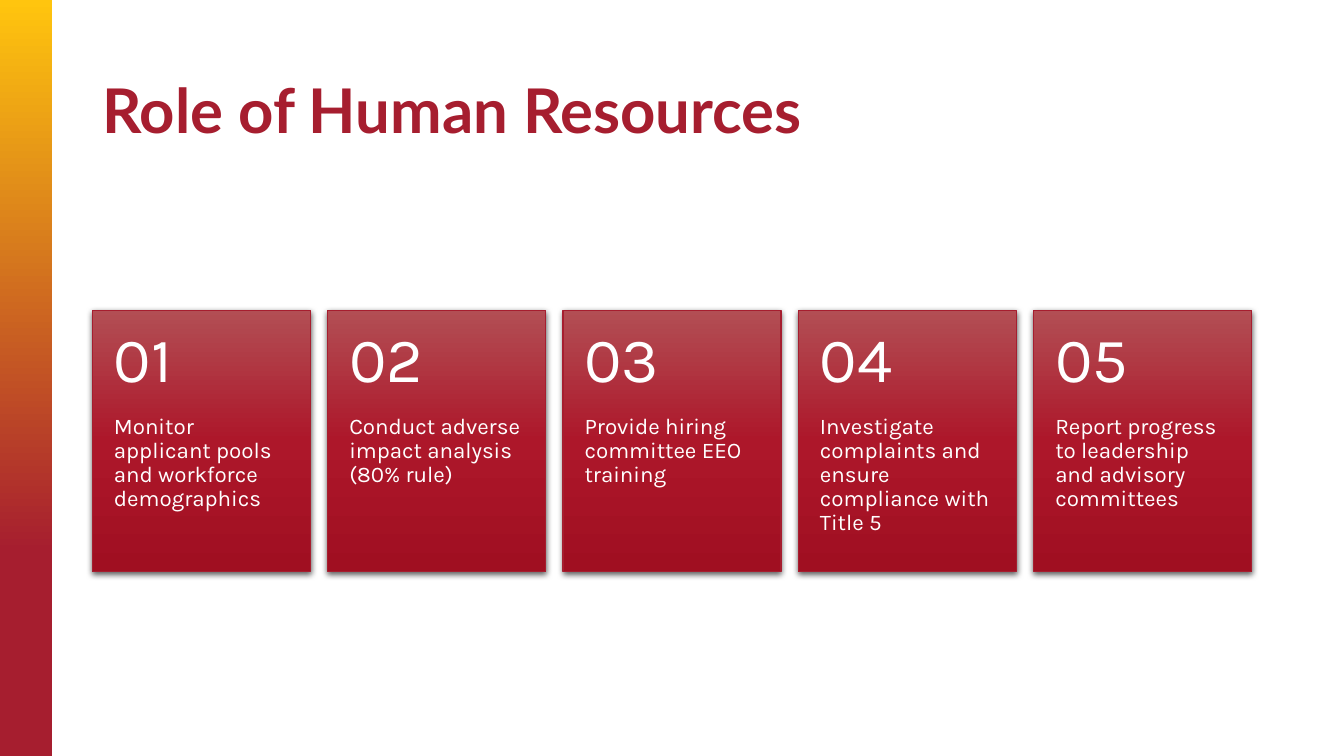
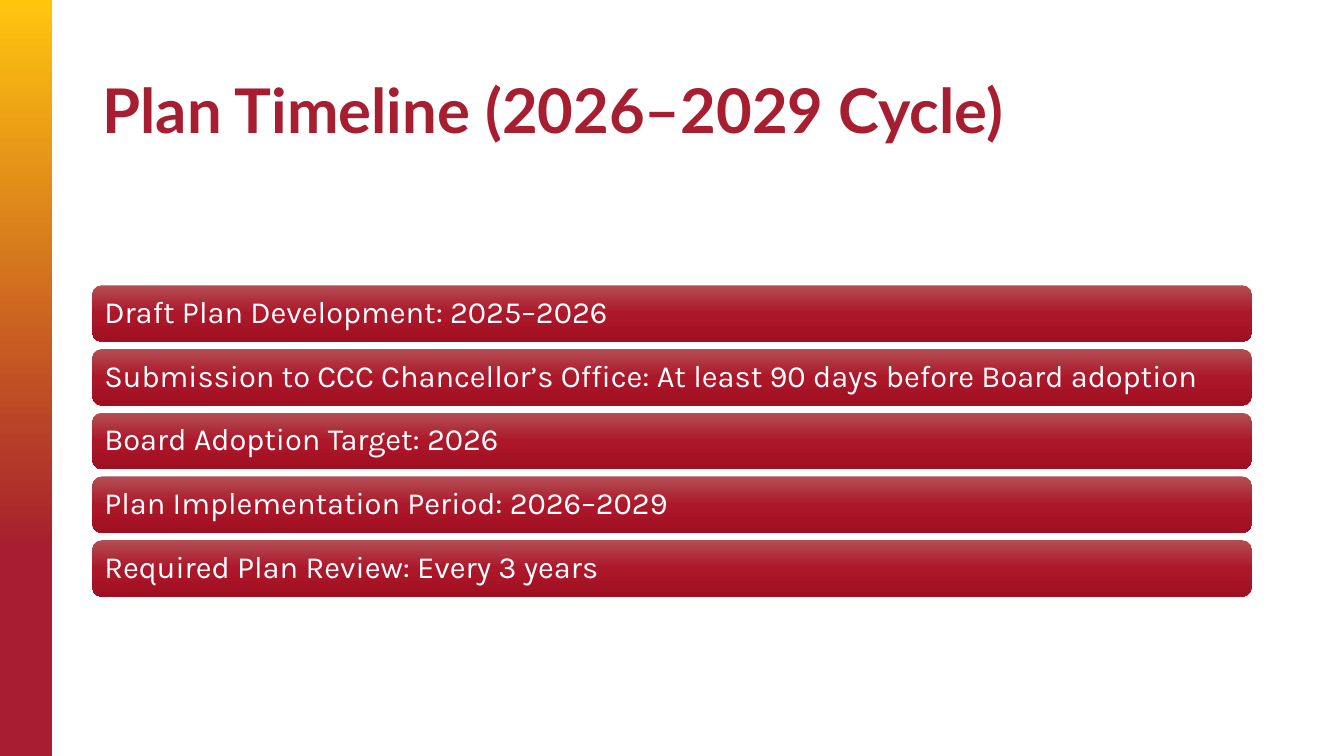
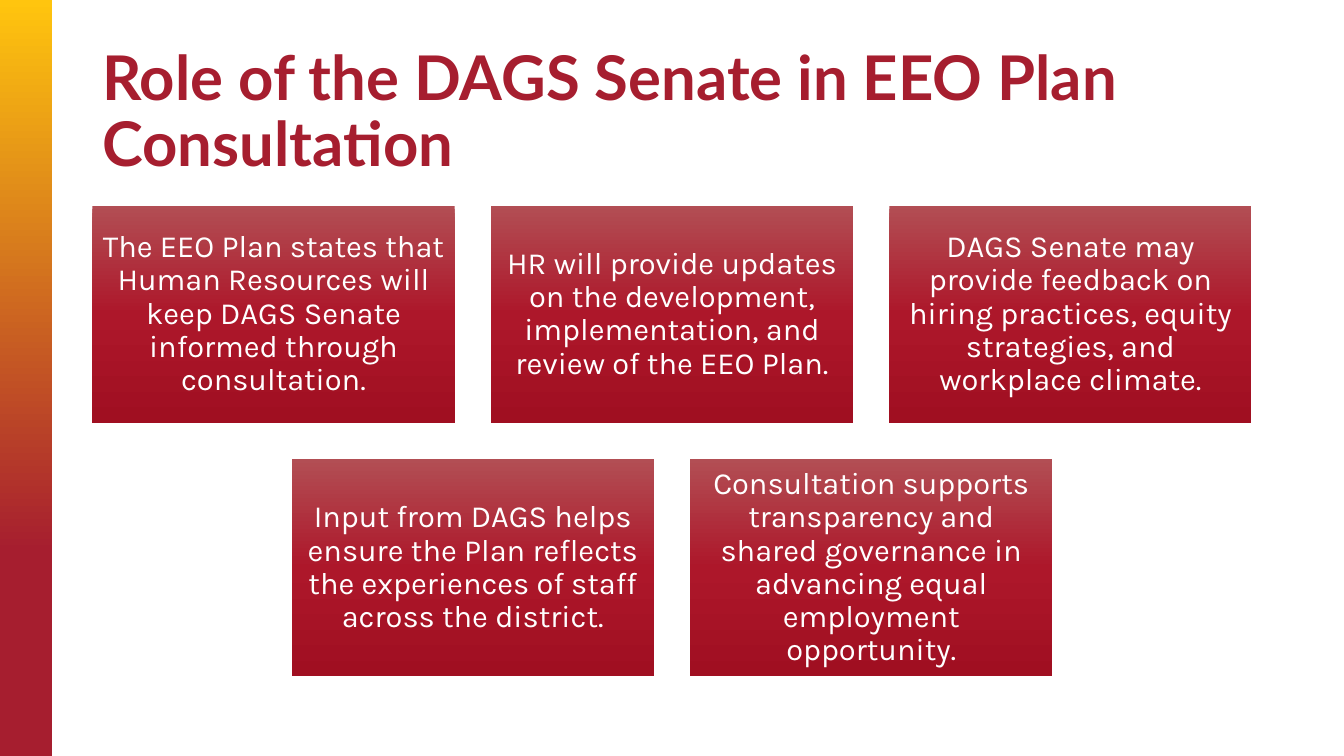
from lxml import etree
from pptx import Presentation
from pptx.dml.color import RGBColor
from pptx.enum.shapes import MSO_SHAPE
from pptx.enum.text import MSO_ANCHOR, MSO_AUTO_SIZE, PP_ALIGN
from pptx.oxml.ns import qn
from pptx.util import Pt

RECT, ROUND = MSO_SHAPE.RECTANGLE, MSO_SHAPE.ROUNDED_RECTANGLE
TOP, MIDDLE = MSO_ANCHOR.TOP, MSO_ANCHOR.MIDDLE
LEFT, CENTER = PP_ALIGN.LEFT, PP_ALIGN.CENTER
FIXED = MSO_AUTO_SIZE.NONE

RED, WHITE = "A61E2F", "FFFFFF"
BAND = [(27, RED), (100, "FFC50E")]
PANEL = [(0, "B24E54"), (50, "AD172A"), (100, "A00F21")]
HEAD, BODY = "Lato", "Karla"
WIDE, HIGH = 960, 540
EDGE, SPAN, MID = 66, 828, 315

ROLES = [
    "Monitor applicant pools and workforce demographics",
    "Conduct adverse impact analysis (80% rule)",
    "Provide hiring committee EEO training",
    "Investigate complaints and ensure compliance with Title 5",
    "Report progress to leadership and advisory committees",
]
STEPS = [
    "Draft Plan Development: 2025–2026",
    "Submission to CCC Chancellor’s Office: At least 90 days before Board adoption",
    "Board Adoption Target: 2026",
    "Plan Implementation Period: 2026–2029",
    "Required Plan Review: Every 3 years",
]
POINTS = [
    "The EEO Plan states that Human Resources will keep DAGS Senate informed through consultation.",
    "HR will provide updates on the development, implementation, and review of the EEO Plan.",
    "DAGS Senate may provide feedback on hiring practices, equity strategies, and workplace climate.",
    "Input from DAGS helps ensure the Plan reflects the experiences of staff across the district.",
    "Consultation supports transparency and shared governance in advancing equal employment opportunity.",
]


def tint(code):
    return RGBColor.from_string(code)


def cells(rows, wide, high, gap):
    top = MID - (len(rows) * (high + gap) - gap) / 2
    for row, count in enumerate(rows):
        left = EDGE + (SPAN - count * (wide + gap) + gap) / 2
        for col in range(count):
            yield left + col * (wide + gap), top + row * (high + gap), wide, high


class Deck:
    """Holds the deck style and the current slide."""

    def __init__(self):
        self.show = Presentation()
        self.show.slide_width, self.show.slide_height = Pt(WIDE), Pt(HIGH)
        self.layout = self.show.slide_layouts[5]
        self.slide = None

    def page(self, title):
        self.slide = self.show.slides.add_slide(self.layout)
        if len(self.show.slides) == 1:
            self.band()
        head = self.slide.shapes.title
        head.left, head.top, head.width, head.height = map(Pt, (EDGE, 28.75, SPAN, 104.38))
        self.words(head.text_frame, title, 44, HEAD, RED, bold=True, inset=(7.2, 3.6, 7.2, 3.6))

    def band(self):
        band = self.panel((0, 0, 37.5, HIGH), stops=BAND, angle=90)
        band.element.xpath(".//p:cNvPr")[0].set("id", "99")
        self.layout.shapes.element.insert(2, band.element)

    def panel(self, box, kind=RECT, stops=PANEL, angle=270):
        shape = self.slide.shapes.add_shape(kind, *map(Pt, box))
        shape.shadow.inherit = False
        shape.line.fill.background()
        shape.fill.gradient()
        shape.fill.gradient_angle = angle
        ramp = shape.element.spPr.find(".//" + qn("a:gsLst"))
        for old in list(ramp):
            ramp.remove(old)
        for place, code in stops:
            stop = etree.SubElement(ramp, qn("a:gs"), pos=str(place * 1000))
            etree.SubElement(stop, qn("a:srgbClr"), val=code)
        return shape

    def raised(self, box):
        shape = self.panel(box)
        shape.line.color.rgb = tint(RED)
        shape.line.width = Pt(1)
        glow = etree.SubElement(
            shape.element.spPr.find(qn("a:effectLst")), qn("a:outerShdw"),
            blurRad=str(Pt(4.5)), dist=str(Pt(1.5)), dir="5400000", rotWithShape="0")
        shade = etree.SubElement(glow, qn("a:srgbClr"), val="000000")
        etree.SubElement(shade, qn("a:alpha"), val="63000")

    def label(self, box, text, size, **style):
        area = self.slide.shapes.add_textbox(*map(Pt, box))
        self.words(area.text_frame, text, size, **style)

    def words(self, frame, text, size, font=BODY, code=WHITE, bold=False,
              align=LEFT, anchor=MIDDLE, inset=(6.6, 6.6, 6.6, 6.6)):
        frame.word_wrap = True
        frame.auto_size = FIXED
        frame.vertical_anchor = anchor
        (frame.margin_left, frame.margin_top,
         frame.margin_right, frame.margin_bottom) = map(Pt, inset)
        para = frame.paragraphs[0]
        para.alignment = align
        para.line_spacing = 0.9
        run = para.add_run()
        run.text = text
        run.font.name, run.font.size, run.font.bold = font, Pt(size), bold
        run.font.color.rgb = tint(code)

    def cards(self, items):
        wide = SPAN / 5.32
        grid = cells([5], wide, 1.2 * wide, 0.08 * wide)
        for rank, (box, text) in enumerate(zip(grid, items), 1):
            left, top, _, high = box
            cut = 0.4 * high
            self.raised(box)
            self.label((left, top + cut, wide, high - cut), text, 16,
                       anchor=TOP, inset=(15.4, 0, 15.4, 26))
            self.label((left, top, wide, cut), f"{rank:02}", 45, inset=(15.4, 13, 15.4, 13))

    def bars(self, items):
        for box, text in zip(cells([1] * 5, SPAN, 40.35, 5.18), items):
            self.words(self.panel(box, ROUND).text_frame, text, 22)

    def tiles(self, items):
        wide = SPAN / 3.2
        for box, text in zip(cells([3, 2], wide, 0.6 * wide, 0.1 * wide), items):
            self.words(self.panel(box).text_frame, text, 22, align=CENTER)


def main():
    deck = Deck()
    deck.page("Role of Human Resources")
    deck.cards(ROLES)
    deck.page("Plan Timeline (2026–2029 Cycle)")
    deck.bars(STEPS)
    deck.page("Role of the DAGS Senate in EEO Plan Consultation")
    deck.tiles(POINTS)
    deck.show.save("out.pptx")


if __name__ == "__main__":
    main()
